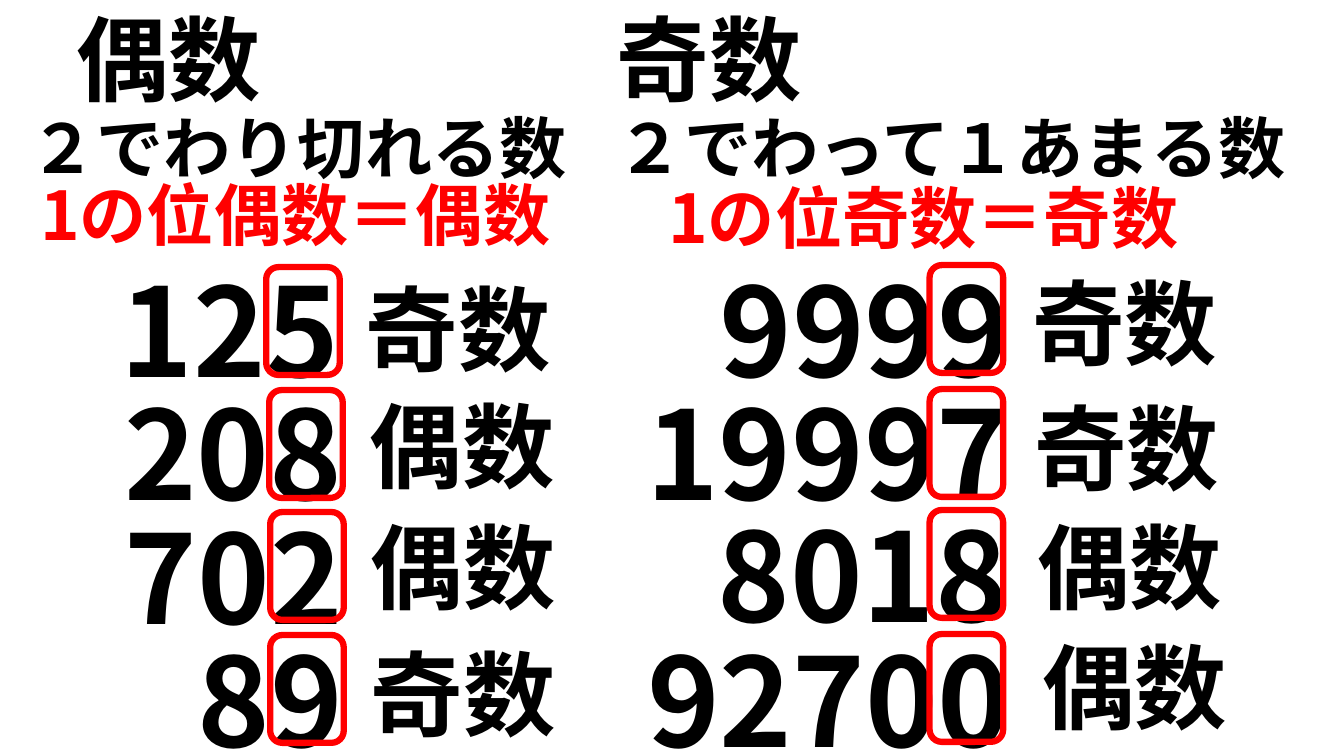
from lxml.etree import SubElement
from pptx import Presentation
from pptx.dml.color import RGBColor
from pptx.enum.shapes import MSO_SHAPE as Shape
from pptx.enum.text import MSO_AUTO_SIZE as AutoSize, PP_ALIGN as Align
from pptx.oxml.ns import qn
from pptx.util import Emu, Pt

BLACK = RGBColor(0, 0, 0)
RED = RGBColor(255, 0, 0)
EMU_PER_PX = 9144
TYPEFACE = "Noto Sans CJK JP"
TEXT_HEIGHTS = {88: 158, 66: 121, 48: 91}
WORD_WIDTH = 228


def px(*lengths):
    return [Emu(length * EMU_PER_PX) for length in lengths]


class NumberPage:
    def __init__(self, deck):
        self.page = deck.slides.add_slide(deck.slide_layouts[6])

    def text(self, wording, left, top, width, size, color=BLACK, align=Align.LEFT, wrap=True):
        box = self.page.shapes.add_textbox(*px(left, top, width, TEXT_HEIGHTS[size]))
        frame = box.text_frame
        frame.word_wrap = wrap
        frame.auto_size = AutoSize.SHAPE_TO_FIT_TEXT
        para = frame.paragraphs[0]
        para.alignment = align
        span = para.add_run()
        span.text = wording
        for name, value in {"name": TYPEFACE, "size": Pt(size), "bold": True}.items():
            setattr(span.font, name, value)
        span.font.color.rgb = color
        SubElement(span.font._element, qn("a:ea"), typeface=TYPEFACE)

    def word(self, wording, left, top):
        self.text(wording, left, top, WORD_WIDTH, 66)

    def ones_frame(self, left, top):
        box = self.page.shapes.add_shape(Shape.ROUNDED_RECTANGLE, *px(left, top, 73, 107))
        box.shadow.inherit = False
        box.fill.background()
        box.line.color.rgb = RED
        box.line.width = Pt(4.5)


HEADINGS = [("偶数", 66), ("奇数", 602)]
MEANINGS = [("２でわり切れる数", 19, 559), ("２でわって１あまる数", 602, 693)]
RULES = [("1の位偶数＝偶数", 30, 167), ("1の位奇数＝奇数", 653, 170)]
NUMBERS = [
    ("125", 106, 247, 240, Align.RIGHT),
    ("208", 100, 369, 249, Align.RIGHT),
    ("702", 110, 492, 240, Align.RIGHT),
    ("89", 176, 614, 174, Align.RIGHT),
    ("9999", 704, 247, 340, Align.LEFT),
    ("19997", 631, 369, 409, Align.LEFT),
    ("8018", 702, 490, 364, Align.LEFT),
    ("92700", 632, 614, 408, Align.LEFT),
]
ANSWERS = [
    ("奇数", 353, 265), ("偶数", 357, 381), ("偶数", 358, 501), ("奇数", 358, 627),
    ("奇数", 1014, 259), ("奇数", 1016, 383), ("偶数", 1019, 501), ("偶数", 1024, 620),
]
ONES_FRAMES = [
    (264, 265), (267, 387), (268, 508), (268, 630),
    (922, 263), (922, 386), (922, 506), (922, 629),
]


def main():
    deck = Presentation()
    deck.slide_width, deck.slide_height = px(1333, 750)
    page = NumberPage(deck)
    for wording, left, top, width, align in NUMBERS:
        page.text(wording, left, top, width, 88, align=align)
    for answer in ANSWERS:
        page.word(*answer)
    for wording, left in HEADINGS:
        page.word(wording, left, -3)
    for wording, left, width in MEANINGS:
        page.text(wording, left, 101, width, 48, wrap=False)
    for wording, left, top in RULES:
        page.text(wording, left, top, 547, 48, RED)
    for corner in ONES_FRAMES:
        page.ones_frame(*corner)
    deck.save("out.pptx")


if __name__ == "__main__":
    main()
